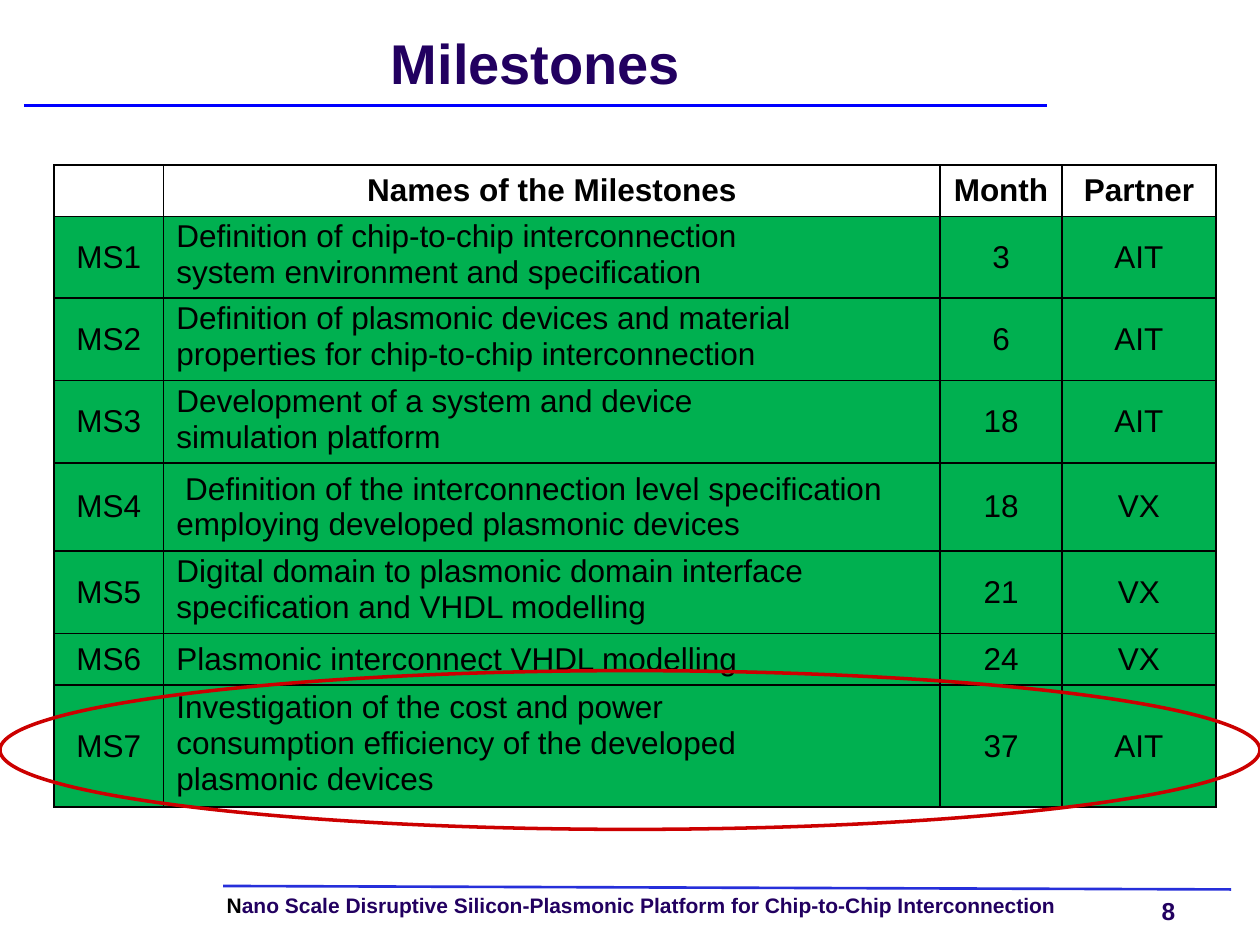
from typing import NamedTuple

from lxml import etree
from pptx import Presentation
from pptx.dml.color import RGBColor
from pptx.enum.shapes import MSO_CONNECTOR, MSO_SHAPE
from pptx.enum.text import MSO_ANCHOR, PP_ALIGN
from pptx.oxml.ns import qn
from pptx.util import Cm, Pt

LEFT, CENTER = PP_ALIGN.LEFT, PP_ALIGN.CENTER
MIDDLE = MSO_ANCHOR.MIDDLE
STRAIGHT = MSO_CONNECTOR.STRAIGHT
OVAL = MSO_SHAPE.OVAL

FONT = "Arial"
BLACK, PURPLE, GREEN, RED = "000000", "220060", "00B050", "CC0000"


class Goal(NamedTuple):
    code: str
    lines: tuple[str, ...]
    month: str
    partner: str
    height: float  # cm


class Rule(NamedTuple):
    start: tuple[float, float]  # cm
    end: tuple[float, float]
    color: str


GOALS = [
    Goal("MS1", ("Definition of chip-to-chip interconnection",
                 "system environment and specification"), "3", "AIT", 1.65),
    Goal("MS2", ("Definition of plasmonic devices and material",
                 "properties for chip-to-chip interconnection"), "6", "AIT", 1.66),
    Goal("MS3", ("Development of a system and device",
                 "simulation platform"), "18", "AIT", 1.66),
    Goal("MS4", (" Definition of the interconnection level specification "
                 "employing developed plasmonic devices",), "18", "VX", 1.78),
    Goal("MS5", ("Digital domain to plasmonic domain interface",
                 "specification and VHDL modelling"), "21", "VX", 1.66),
    Goal("MS6", ("Plasmonic interconnect VHDL modelling",), "24", "VX", 1.04),
    Goal("MS7", ("Investigation of the cost and power",
                 "consumption efficiency of the developed",
                 "plasmonic devices"), "37", "AIT", 2.46),
]
HEADS = ("", "Names of the Milestones", "Month", "Partner")
WIDTHS = (2.21, 15.65, 2.46, 3.1)
HEAD_HEIGHT = 1.03
RULES = [
    Rule((4.5, 17.86), (24.82, 17.93), "262FDA"),
    Rule((0.48, 2.13), (21.11, 2.13), "0000FF"),
]


def paint(color: str) -> RGBColor:
    return RGBColor.from_string(color)


def add_run(para, text: str, size: float, color: str = BLACK, bold: bool = False) -> None:
    run = para.add_run()
    run.text = text
    font = run.font
    font.name, font.size, font.bold = FONT, Pt(size), bold
    font.color.rgb = paint(color)


def strip(frame) -> None:
    frame.margin_left = frame.margin_right = 0
    frame.margin_top = frame.margin_bottom = 0


def add_box(slide, left: float, top: float, width: float, height: float, wrap: bool):
    box = slide.shapes.add_textbox(Cm(left), Cm(top), Cm(width), Cm(height))
    frame = box.text_frame
    strip(frame)
    frame.word_wrap = wrap
    return frame.paragraphs[0]


def add_rule(slide, rule: Rule) -> None:
    ends = [Cm(num) for num in rule.start + rule.end]
    line = slide.shapes.add_connector(STRAIGHT, *ends)
    line.line.color.rgb = paint(rule.color)
    line.line.width = Pt(1.5)
    etree.SubElement(line._element.spPr, qn("a:effectLst"))


def add_edges(cell) -> None:
    props = cell._tc.get_or_add_tcPr()
    for side in ("lnL", "lnR", "lnT", "lnB"):
        edge = etree.SubElement(props, qn(f"a:{side}"), w=str(Pt(1)))
        fill = etree.SubElement(edge, qn("a:solidFill"))
        etree.SubElement(fill, qn("a:srgbClr"), val=BLACK)


def fill_cell(cell, lines: tuple[str, ...], align, head: bool) -> None:
    add_edges(cell)
    if head:
        cell.fill.background()
    else:
        cell.fill.solid()
        cell.fill.fore_color.rgb = paint(GREEN)
    cell.vertical_anchor = MIDDLE
    frame = cell.text_frame
    for idx, text in enumerate(lines):
        para = frame.add_paragraph() if idx else frame.paragraphs[0]
        para.alignment = align
        if len(lines) > 1:
            para.line_spacing = 0.8
        if idx:
            para.space_before = Pt(4.5)
        if text:
            add_run(para, text, 18, bold=head)


def add_goals(slide) -> None:
    heights = [HEAD_HEIGHT] + [goal.height for goal in GOALS]
    table = slide.shapes.add_table(
        len(heights), len(WIDTHS), Cm(1.09), Cm(3.33),
        Cm(sum(WIDTHS)), Cm(sum(heights))).table
    table.first_row = table.horz_banding = False
    for col, width in zip(table.columns, WIDTHS):
        col.width = Cm(width)
    for row, height in zip(table.rows, heights):
        row.height = Cm(height)
    for cell, text in zip(table.rows[0].cells, HEADS):
        fill_cell(cell, (text,), CENTER, True)
    for row, goal in enumerate(GOALS, 1):
        parts = ((goal.code,), goal.lines, (goal.month,), (goal.partner,))
        for col, lines in enumerate(parts):
            fill_cell(table.cell(row, col), lines, LEFT if col == 1 else CENTER, False)


def main() -> None:
    deck = Presentation()
    deck.slide_width, deck.slide_height = Cm(25.4), Cm(19.05)
    slide = deck.slides.add_slide(deck.slide_layouts[5])

    # Footer and page number
    foot = add_box(slide, 4.57, 18.05, 18.14, 0.46, True)
    foot.line_spacing = 0.9
    add_run(foot, "N", 12, BLACK, True)
    add_run(foot, "ano Scale Disruptive Silicon-Plasmonic Platform for "
            "Chip-to-Chip Interconnection", 12, PURPLE, True)
    page = add_box(slide, 23.42, 18.06, 0.61, 0.58, False)
    add_run(page, "8", 14, PURPLE, True)

    # Rules
    for rule in RULES:
        add_rule(slide, rule)

    # Title
    title = slide.shapes.title
    title.left, title.top = Cm(0.5), Cm(0.51)
    title.width, title.height = Cm(20.6), Cm(1.7)
    frame = title.text_frame
    strip(frame)
    frame.vertical_anchor = MIDDLE
    para = frame.paragraphs[0]
    para.alignment = CENTER
    para.line_spacing = Pt(32)
    add_run(para, "Milestones", 32, PURPLE, True)

    # Milestone table
    add_goals(slide)

    # Ring around the last milestone
    ring = slide.shapes.add_shape(OVAL, 0, Cm(13.52), Cm(25.4), Cm(3.2))
    ring.shadow.inherit = False
    ring.fill.background()
    ring.line.color.rgb = paint(RED)
    ring.line.width = Pt(2)

    deck.save("out.pptx")


if __name__ == "__main__":
    main()
